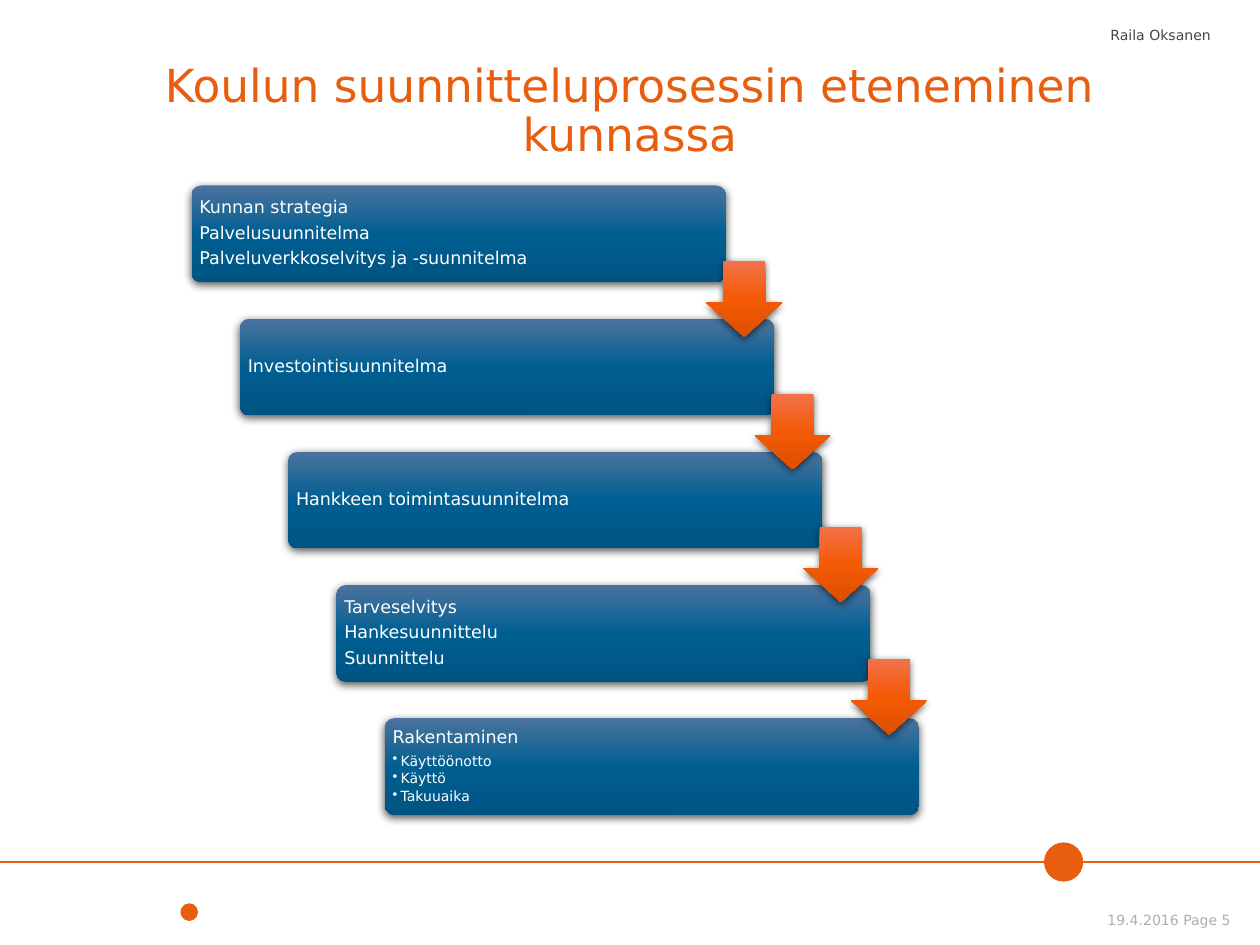
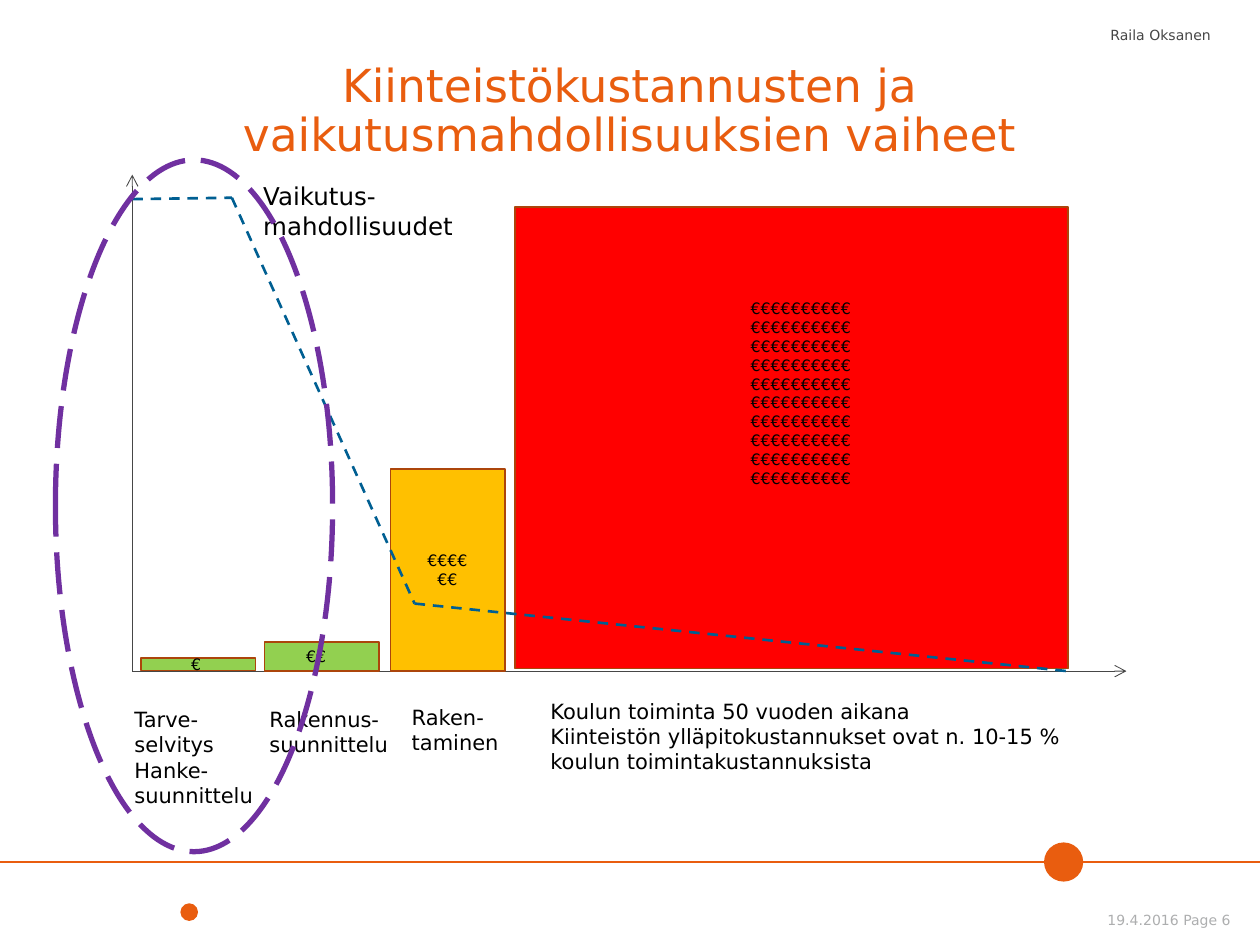
from dataclasses import dataclass

import pptx
import pptx.dml.color
import pptx.enum.dml
import pptx.enum.shapes
import pptx.enum.text
import pptx.oxml
import pptx.oxml.ns
import pptx.util

Pt = pptx.util.Pt
Shapes = pptx.enum.shapes.MSO_SHAPE
Align = pptx.enum.text.PP_ALIGN
Anchor = pptx.enum.text.MSO_ANCHOR
Dash = pptx.enum.dml.MSO_LINE

FONT = "DejaVu Sans"
COLORS = {
    "orange": "E95D0F",
    "footer": "ADAEAF",
    "grey": "464646",
    "white": "FFFFFF",
    "black": "000000",
    "blue": "005F92",
    "green": "92D050",
    "yellow": "FFC000",
    "red": "FF0000",
    "brown": "AC450B",
    "purple": "7030A0",
}
STEP_GRADIENT = ("4B739E", "005F92", "005482")
ARROW_GRADIENT = ("F2714B", "F45A04", "DC4F00")


@dataclass
class Box:
    left: float
    top: float
    width: float
    height: float

    def lengths(self):
        return [Pt(value) for value in (self.left, self.top, self.width, self.height)]


@dataclass
class Step:
    text: str
    details: str = ""


@dataclass
class Bar:
    box: Box
    color: str


@dataclass
class Label:
    text: str
    box: Box
    size: float = 12
    align: Align = Align.LEFT
    wrap: bool = True


@dataclass
class Segment:
    start: tuple[float, float]
    end: tuple[float, float]


STEPS = [
    Step("Kunnan strategia\nPalvelusuunnitelma\nPalveluverkkoselvitys ja -suunnitelma"),
    Step("Investointisuunnitelma"),
    Step("Hankkeen toimintasuunnitelma"),
    Step("Tarveselvitys\nHankesuunnittelu\nSuunnittelu"),
    Step("Rakentaminen", "Käyttöönotto\nKäyttö\nTakuuaika"),
]
AXES = [Segment((75.6, 383.5), (643.7, 383.5)), Segment((75.6, 383.5), (75.6, 99.8))]
COST_BARS = [
    Bar(Box(80.6, 376, 65.5, 7.2), "green"),
    Bar(Box(151.2, 366.7, 65.5, 16.7), "green"),
    Bar(Box(223.2, 268.2, 65.5, 115.2), "yellow"),
    Bar(Box(294.3, 118.3, 316.2, 263.8), "red"),
]
COST_LABELS = [
    Label("Tarve-selvitys\nHanke-suunnittelu", Box(69.8, 400.3, 83.5, 65.5)),
    Label("Rakennus-suunnittelu", Box(146.9, 400.3, 85.7, 36)),
    Label("Raken-\ntaminen", Box(228.2, 398.9, 75.6, 36)),
    Label(
        "Koulun toiminta 50 vuoden aikana\n"
        "Kiinteistön ylläpitokustannukset ovat n. 10-15 % koulun toimintakustannuksista",
        Box(307.4, 395.4, 316.1, 51.1),
    ),
    Label("€", Box(102.2, 370.8, 20.2, 18), 9, wrap=False),
    Label("€€", Box(167.8, 365.8, 25.9, 18), 9, wrap=False),
    Label("€€€€\n€€", Box(236.9, 311, 37.4, 28.8), 9, Align.CENTER, False),
    Label("\n".join(["€" * 10] * 10), Box(370.8, 167, 173.5, 116.6), 9, Align.CENTER),
]
INFLUENCE_LABEL = Label("Vaikutus-mahdollisuudet", Box(143.3, 100.1, 131, 41), 14)
INFLUENCE_POINTS = [(75.6, 113.8), (132.5, 113), (236.9, 344.9), (609.8, 383.5)]


def rgb(name: str) -> pptx.dml.color.RGBColor:
    return pptx.dml.color.RGBColor.from_string(COLORS[name])


def drawing_xml(markup: str):
    head, tail = markup.split(" ", 1)
    return pptx.oxml.parse_xml(f"{head} {pptx.oxml.ns.nsdecls('a')} {tail}")


def add_bullet(paragraph, indent: float) -> None:
    properties = paragraph._p.get_or_add_pPr()
    properties.set("marL", str(Pt(indent)))
    properties.set("indent", str(-Pt(indent)))
    properties.append(drawing_xml('<a:buChar char="•"/>'))


def write_text(shape, text: str, *, size: float, color: str = "black",
               align: Align = Align.LEFT, anchor: Anchor = Anchor.TOP,
               insets: tuple[float, float] = (7.2, 3.6), wrap: bool = True,
               line_spacing: float = 1, after: float = 0,
               bullet_indent: float = 0) -> None:
    frame = shape.text_frame
    frame.word_wrap = wrap
    frame.vertical_anchor = anchor
    frame.margin_left = frame.margin_right = Pt(insets[0])
    frame.margin_top = frame.margin_bottom = Pt(insets[1])
    for line in text.split("\n"):
        paragraph = frame.add_paragraph() if frame.text else frame.paragraphs[0]
        paragraph.alignment = align
        paragraph.line_spacing = line_spacing
        paragraph.space_after = Pt(after)
        if bullet_indent:
            add_bullet(paragraph, bullet_indent)
        run = paragraph.add_run()
        run.text = line
        run.font.name = FONT
        run.font.size = Pt(size)
        run.font.color.rgb = rgb(color)


def add_text(slide, text: str, box: Box, **text_format) -> None:
    write_text(slide.shapes.add_textbox(*box.lengths()), text, **text_format)


def add_label(slide, label: Label) -> None:
    add_text(slide, label.text, label.box, size=label.size,
             align=label.align, wrap=label.wrap)


def add_shape(slide, kind: Shapes, box: Box, fill: str = "", line: str = "",
              line_width: float = 1):
    shape = slide.shapes.add_shape(kind, *box.lengths())
    shape.shadow.inherit = False
    if fill:
        shape.fill.solid()
        shape.fill.fore_color.rgb = rgb(fill)
    else:
        shape.fill.background()
    if line:
        shape.line.color.rgb = rgb(line)
        shape.line.width = Pt(line_width)
    else:
        shape.line.fill.background()
    return shape


def add_glossy_shape(slide, kind: Shapes, box: Box, gradient: tuple[str, ...],
                     adjustments: tuple[float, ...]):
    shape = add_shape(slide, kind, box)
    for index, value in enumerate(adjustments):
        shape.adjustments[index] = value
    stops = "".join(
        f'<a:gs pos="{index * 50000}"><a:srgbClr val="{color}"/></a:gs>'
        for index, color in enumerate(gradient)
    )
    properties = shape._element.spPr
    properties.replace(
        properties.find(pptx.oxml.ns.qn("a:noFill")),
        drawing_xml(f'<a:gradFill rotWithShape="1"><a:gsLst>{stops}</a:gsLst>'
                    '<a:lin ang="5400000" scaled="0"/></a:gradFill>'),
    )
    properties.find(pptx.oxml.ns.qn("a:effectLst")).append(drawing_xml(
        f'<a:outerShdw blurRad="{Pt(4.5)}" dist="{Pt(1.5)}" dir="5400000" rotWithShape="0">'
        '<a:srgbClr val="000000"><a:alpha val="63000"/></a:srgbClr></a:outerShdw>'
    ))
    return shape


def add_line(slide, segment: Segment, color: str, width: float,
             dash: Dash | None = None, arrow: bool = False) -> None:
    connector = slide.shapes.add_connector(
        pptx.enum.shapes.MSO_CONNECTOR.STRAIGHT,
        *[Pt(value) for value in segment.start + segment.end],
    )
    connector.line.color.rgb = rgb(color)
    connector.line.width = Pt(width)
    if dash:
        connector.line.dash_style = dash
    properties = connector._element.spPr
    if arrow:
        properties.find(pptx.oxml.ns.qn("a:ln")).append(
            drawing_xml('<a:tailEnd type="arrow"/>'))
    properties.append(drawing_xml("<a:effectLst />"))


def add_base_slide(presentation, title: str, page: int):
    slide = presentation.slides.add_slide(presentation.slide_layouts[6])
    add_line(slide, Segment((0, 492.5), (720, 492.5)), "orange", 1.5)
    add_text(slide, f"19.4.2016 Page {page}", Box(452.9, 511.9, 250.5, 18.7), size=8,
             color="footer", align=Align.RIGHT, anchor=Anchor.BOTTOM, insets=(0, 0))
    for dot in (Box(596.6, 481.4, 22.4, 22.4), Box(103.1, 516.2, 10.1, 10.1)):
        add_shape(slide, Shapes.OVAL, dot, "orange")
    add_text(slide, title, Box(36, 27.4, 648, 64.8), size=26, color="orange",
             align=Align.CENTER, anchor=Anchor.BOTTOM, insets=(0, 0), line_spacing=0.9)
    add_text(slide, "Raila Oksanen", Box(382.3, 11.5, 316.8, 15.8), size=8,
             color="grey", align=Align.RIGHT)
    return slide


def build_process_slide(presentation) -> None:
    slide = add_base_slide(presentation, "Koulun suunnitteluprosessin eteneminen kunnassa", 5)
    step_format = dict(color="white", anchor=Anchor.MIDDLE, insets=(2.9, 2.9),
                       line_spacing=0.9)
    for index, step in enumerate(STEPS):
        box = Box(109.5 + 27.6 * index, 106 + 76.1 * index, 305.3, 55.2)
        shape = add_glossy_shape(slide, Shapes.ROUNDED_RECTANGLE, box, STEP_GRADIENT, (0.1,))
        write_text(shape, step.text, size=10, after=3.8, **step_format)
        if step.details:
            write_text(shape, step.details, size=8, after=1.5, bullet_indent=4.5,
                       **step_format)
    for index in range(len(STEPS) - 1):
        box = Box(403.7 + 27.6 * index, 149.3 + 75.8 * index, 43.2, 43.2)
        add_glossy_shape(slide, Shapes.DOWN_ARROW, box, ARROW_GRADIENT, (0.55, 0.45))


def build_cost_slide(presentation) -> None:
    slide = add_base_slide(
        presentation, "Kiinteistökustannusten ja vaikutusmahdollisuuksien vaiheet", 6)
    for axis in AXES:
        add_line(slide, axis, "grey", 0.5, arrow=True)
    for bar in COST_BARS:
        add_shape(slide, Shapes.RECTANGLE, bar.box, bar.color, "brown")
    for label in COST_LABELS:
        add_label(slide, label)
    for start, end in zip(INFLUENCE_POINTS, INFLUENCE_POINTS[1:]):
        add_line(slide, Segment(start, end), "blue", 1.5, Dash.DASH)
    add_label(slide, INFLUENCE_LABEL)
    early_phases = add_shape(slide, Shapes.OVAL, Box(31.7, 91.4, 158.4, 395.3),
                             line="purple", line_width=3)
    early_phases.line.dash_style = Dash.LONG_DASH


def main() -> None:
    presentation = pptx.Presentation()
    presentation.slide_width = Pt(720)
    presentation.slide_height = Pt(540)
    build_process_slide(presentation)
    build_cost_slide(presentation)
    presentation.save("out.pptx")


if __name__ == "__main__":
    main()
